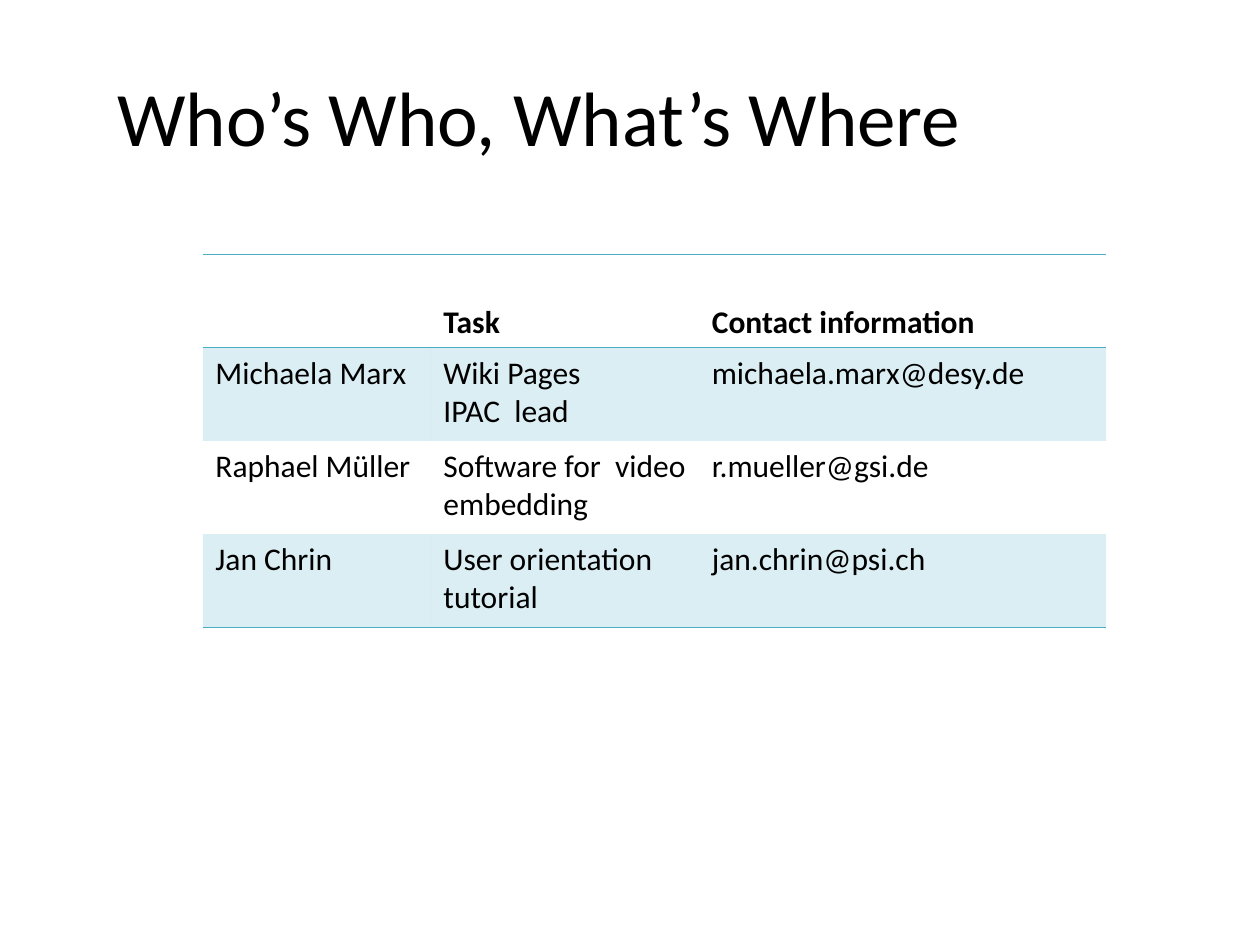
from lxml.etree import SubElement
from pptx import Presentation
from pptx.dml.color import RGBColor
from pptx.enum.text import MSO_ANCHOR, PP_ALIGN
from pptx.oxml.ns import qn
from pptx.util import Inches, Pt

# Content
TITLE = "Who’s Who, What’s Where"
ROWS = [
    ("", "Task", "Contact information"),
    ("Michaela Marx", "Wiki Pages\nIPAC  lead", "michaela.marx@desy.de"),
    ("Raphael Müller", "Software for  video embedding", "r.mueller@gsi.de"),
    ("Jan Chrin", "User orientation tutorial", "jan.chrin@psi.ch"),
]

# Look and layout
FONT = "Calibri"
BLACK = RGBColor(0x00, 0x00, 0x00)
TEAL = RGBColor(0x4B, 0xAC, 0xC6)
BAND_OPACITY = 20
NO_STYLE = "{2D5ABB26-0587-4C30-8999-92F81FD0307C}"
COLUMN_WIDTHS = (1.81, 2.13, 3.23)
ROW_HEIGHT = 0.74


def format_text(frame, size, bold=False):
    for para in frame.paragraphs:
        para.alignment = PP_ALIGN.LEFT
        font = para.font
        for target in [font] + [span.font for span in para.runs]:
            target.name, target.size, target.bold = FONT, Pt(size), bold
            target.color.rgb = BLACK


def add_border(cell, side):
    line = SubElement(cell._tc.get_or_add_tcPr(), qn(f"a:ln{side}"), w=str(Pt(1)))
    fill = SubElement(line, qn("a:solidFill"))
    SubElement(fill, qn("a:srgbClr"), val=str(TEAL))


def fill_band(cell):
    cell.fill.solid()
    cell.fill.fore_color.rgb = TEAL
    color = cell._tc.tcPr.find(f".//{qn('a:solidFill')}[last()]/{qn('a:srgbClr')}") \
        if not cell._tc.tcPr.findall(qn("a:lnB")) \
        else cell._tc.tcPr.find(qn("a:solidFill")).find(qn("a:srgbClr"))
    SubElement(color, qn("a:alpha"), val=str(BAND_OPACITY * 1000))


deck = Presentation()
deck.slide_width, deck.slide_height = Inches(10), Inches(7.5)
page = deck.slides.add_slide(deck.slide_layouts[5])

# Title
title = page.shapes.title
title.left, title.top = Inches(0.83), Inches(0.29)
title.width, title.height = Inches(8.83), Inches(1.25)
title.text_frame.text = TITLE
title.text_frame.vertical_anchor = MSO_ANCHOR.MIDDLE
format_text(title.text_frame, 44)

# Contact table
frame = page.shapes.add_table(
    len(ROWS), len(COLUMN_WIDTHS), Inches(1.61), Inches(2.02),
    Inches(sum(COLUMN_WIDTHS)), Inches(ROW_HEIGHT * len(ROWS)))
table = frame.table
table._tbl.tblPr.find(qn("a:tableStyleId")).text = NO_STYLE
table.horz_banding = False
for column, width in zip(table.columns, COLUMN_WIDTHS):
    column.width = Inches(width)

for r, values in enumerate(ROWS):
    table.rows[r].height = Inches(ROW_HEIGHT)
    is_header, is_last = r == 0, r == len(ROWS) - 1
    for c, value in enumerate(values):
        cell = table.cell(r, c)
        cell.text_frame.text = value
        format_text(cell.text_frame, 18, bold=is_header)
        cell.vertical_anchor = MSO_ANCHOR.BOTTOM if is_header else MSO_ANCHOR.TOP
        if is_header:
            add_border(cell, "T")
        if is_header or is_last:
            add_border(cell, "B")
        if r % 2:
            fill_band(cell)
        else:
            cell.fill.background()

deck.save("out.pptx")
